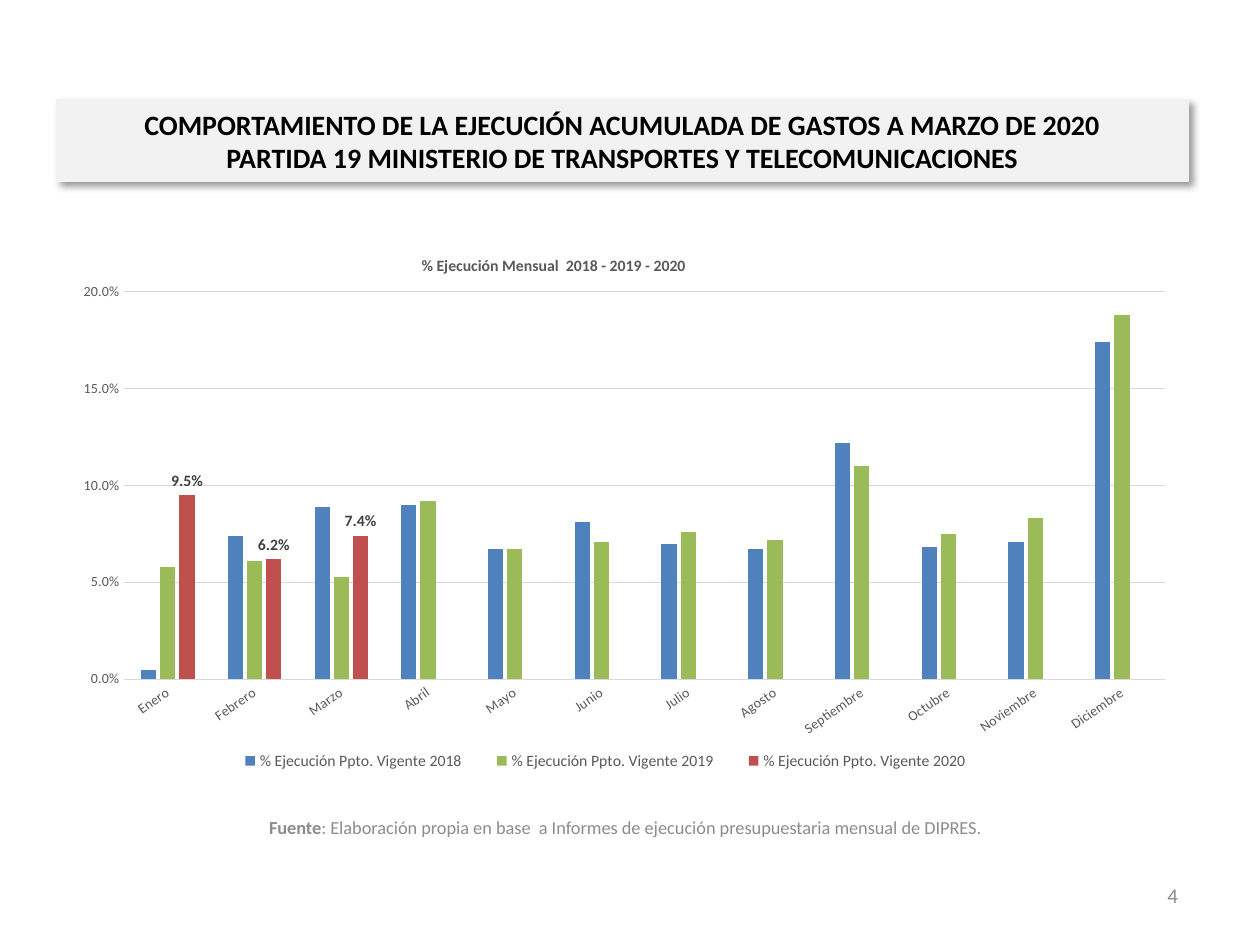
import pptx
import pptx.chart.data
import pptx.dml.color
import pptx.enum.chart
import pptx.enum.text
import pptx.oxml
import pptx.oxml.ns
import pptx.util

Cm, Pt = pptx.util.Cm, pptx.util.Pt
ALIGN = pptx.enum.text.PP_ALIGN
FONT = "Calibri"
GREY = "8C8C8C"
LABEL_GREY = "595959"
GRID_GREY = "D9D9D9"
PANEL = "F2F2F2"

HEADING = [
    "COMPORTAMIENTO DE LA EJECUCIÓN ACUMULADA DE GASTOS A MARZO DE 2020",
    "PARTIDA 19 MINISTERIO DE TRANSPORTES Y TELECOMUNICACIONES",
]
MONTHS = ["Enero", "Febrero", "Marzo", "Abril", "Mayo", "Junio", "Julio",
          "Agosto", "Septiembre", "Octubre", "Noviembre", "Diciembre"]
EXECUTION = {
    2018: ("4F81BD", [0.005, 0.074, 0.089, 0.09, 0.067, 0.081,
                      0.07, 0.067, 0.122, 0.068, 0.071, 0.174]),
    2019: ("9BBB59", [0.058, 0.061, 0.053, 0.092, 0.067, 0.071,
                      0.076, 0.072, 0.11, 0.075, 0.083, 0.188]),
    2020: ("C0504D", [0.095, 0.062, 0.074] + [None] * 9),
}


def rgb(value):
    """Turn a hex string into a colour."""
    return pptx.dml.color.RGBColor.from_string(value)


def style_font(font, size, color, bold=False):
    """Set the typeface, size, colour and weight of a font."""
    font.name = FONT
    font.size = Pt(size)
    font.bold = bold
    font.color.rgb = rgb(color)


def add_span(para, text, size=12, color=GREY, bold=False, align=ALIGN.CENTER):
    """Append a formatted run to a paragraph."""
    para.alignment = align
    span = para.add_run()
    span.text = text
    style_font(span.font, size, color, bold)


def place(box, left, top, width, height):
    """Move and size a box and centre its text vertically."""
    box.left, box.top, box.width, box.height = map(Cm, (left, top, width, height))
    frame = box.text_frame
    frame.word_wrap = True
    frame.auto_size = pptx.enum.text.MSO_AUTO_SIZE.NONE
    frame.vertical_anchor = pptx.enum.text.MSO_ANCHOR.MIDDLE
    return frame.paragraphs[0]


def add_text_box(page, *bounds):
    """Add a text box and return its first paragraph."""
    return place(page.shapes.add_textbox(0, 0, 0, 0), *bounds)


def add_drop_shadow(box):
    """Give a box a soft black shadow to the lower right."""
    box.shadow.inherit = False
    effects = box.element.spPr.find(pptx.oxml.ns.qn("a:effectLst"))
    effects.append(pptx.oxml.parse_xml(
        f'<a:outerShdw {pptx.oxml.ns.nsdecls("a")} blurRad="{Pt(4)}" dist="{Pt(3)}" '
        'dir="2700000" algn="tl" rotWithShape="0"><a:srgbClr val="000000">'
        '<a:alpha val="40000"/></a:srgbClr></a:outerShdw>'))


def fill_heading(title):
    """Format the title placeholder as a shaded heading panel."""
    para = place(title, 1.14, 2.01, 22.81, 1.65)
    title.fill.solid()
    title.fill.fore_color.rgb = rgb(PANEL)
    title.line.color.rgb = rgb(PANEL)
    title.line.width = Pt(0.75)
    add_drop_shadow(title)
    for index, line in enumerate(HEADING):
        if index:
            para.add_line_break()
        add_span(para, line, size=16, color="000000", bold=True)


def set_layout(chart, query, inner=False, **fractions):
    """Fix the position of a chart part as fractions of the chart."""
    part = chart.element.xpath(query)[0]
    for old in part.xpath("c:layout"):
        part.remove(old)
    target = '<c:layoutTarget val="inner"/>' if inner else ""
    modes = "".join(f'<c:{key}Mode val="edge"/>' for key in "xy")
    values = "".join(f'<c:{key} val="{value}"/>' for key, value in fractions.items())
    layout = pptx.oxml.parse_xml(
        f'<c:layout {pptx.oxml.ns.nsdecls("c")}><c:manualLayout>'
        f'{target}{modes}{values}</c:manualLayout></c:layout>')
    part.insert(len(part.xpath("c:tx|c:legendPos")), layout)


def style_axes(chart):
    """Format the month axis and the percentage axis."""
    months, percent = chart.category_axis, chart.value_axis
    for axis in (months, percent):
        axis.major_tick_mark = pptx.enum.chart.XL_TICK_MARK.NONE
        axis.minor_tick_mark = pptx.enum.chart.XL_TICK_MARK.NONE
        style_font(axis.tick_labels.font, 8, LABEL_GREY)
    chart.element.xpath("//c:catAx/c:txPr/a:bodyPr")[0].set("rot", "-2100000")
    percent.minimum_scale, percent.maximum_scale = 0, 0.2
    percent.major_unit = 0.05
    percent.tick_labels.number_format = "0.0%"
    percent.tick_labels.number_format_is_linked = False
    percent.has_major_gridlines = True
    percent.format.line.fill.background()
    for line in (months.format.line, percent.major_gridlines.format.line):
        line.color.rgb = rgb(GRID_GREY)
        line.width = Pt(0.75)


def style_series(plot):
    """Colour the columns and label the latest year."""
    plot.gap_width, plot.overlap = 219, -27
    plot.vary_by_categories = False
    for series, (color, _) in zip(plot.series, EXECUTION.values()):
        series.format.fill.solid()
        series.format.fill.fore_color.rgb = rgb(color)
        series.invert_if_negative = False
    labels = plot.series[-1].data_labels
    labels.show_value = True
    labels.position = pptx.enum.chart.XL_LABEL_POSITION.OUTSIDE_END
    labels.number_format = "0.0%"
    labels.number_format_is_linked = False
    style_font(labels.font, 9, "404040", bold=True)


def add_execution_chart(page):
    """Add the monthly execution column chart."""
    data = pptx.chart.data.CategoryChartData(number_format="0.0%")
    data.categories = MONTHS
    for year, (_, values) in EXECUTION.items():
        data.add_series(f"% Ejecución Ppto. Vigente {year}", values)
    chart = page.shapes.add_chart(
        pptx.enum.chart.XL_CHART_TYPE.COLUMN_CLUSTERED,
        Cm(1.14), Cm(4.52), Cm(22.81), Cm(11.33), data).chart
    style_font(chart.font, 10, "000000")
    chart.has_title = True
    add_span(chart.chart_title.text_frame.paragraphs[0],
             "% Ejecución Mensual  2018 - 2019 - 2020",
             size=9, color=LABEL_GREY, bold=True)
    chart.has_legend = True
    chart.legend.position = pptx.enum.chart.XL_LEGEND_POSITION.BOTTOM
    chart.legend.include_in_layout = False
    style_font(chart.legend.font, 9, LABEL_GREY)
    style_axes(chart)
    style_series(chart.plots[0])
    set_layout(chart, "c:chart/c:title", x=0.32, y=0.05)
    set_layout(chart, "//c:plotArea", inner=True, x=0.06, y=0.12, w=0.92, h=0.69)
    set_layout(chart, "//c:legend", x=0.14, y=0.93, w=0.69, h=0.05)


def main():
    """Build and save the deck."""
    deck = pptx.Presentation()
    deck.slide_width, deck.slide_height = Cm(25.4), Cm(19.05)
    page = deck.slides.add_slide(deck.slide_layouts[5])
    fill_heading(page.shapes.title)
    add_execution_chart(page)
    source = add_text_box(page, 2.31, 16.28, 20.6, 0.81)
    add_span(source, "Fuente", size=10.5, bold=True)
    add_span(source, ": Elaboración propia en base  a Informes de ejecución "
             "presupuestaria mensual de DIPRES.", size=10.5)
    number = add_text_box(page, 18.08, 17.53, 5.92, 1.02)
    add_span(number, "4", align=ALIGN.RIGHT)
    deck.save("out.pptx")


if __name__ == "__main__":
    main()
